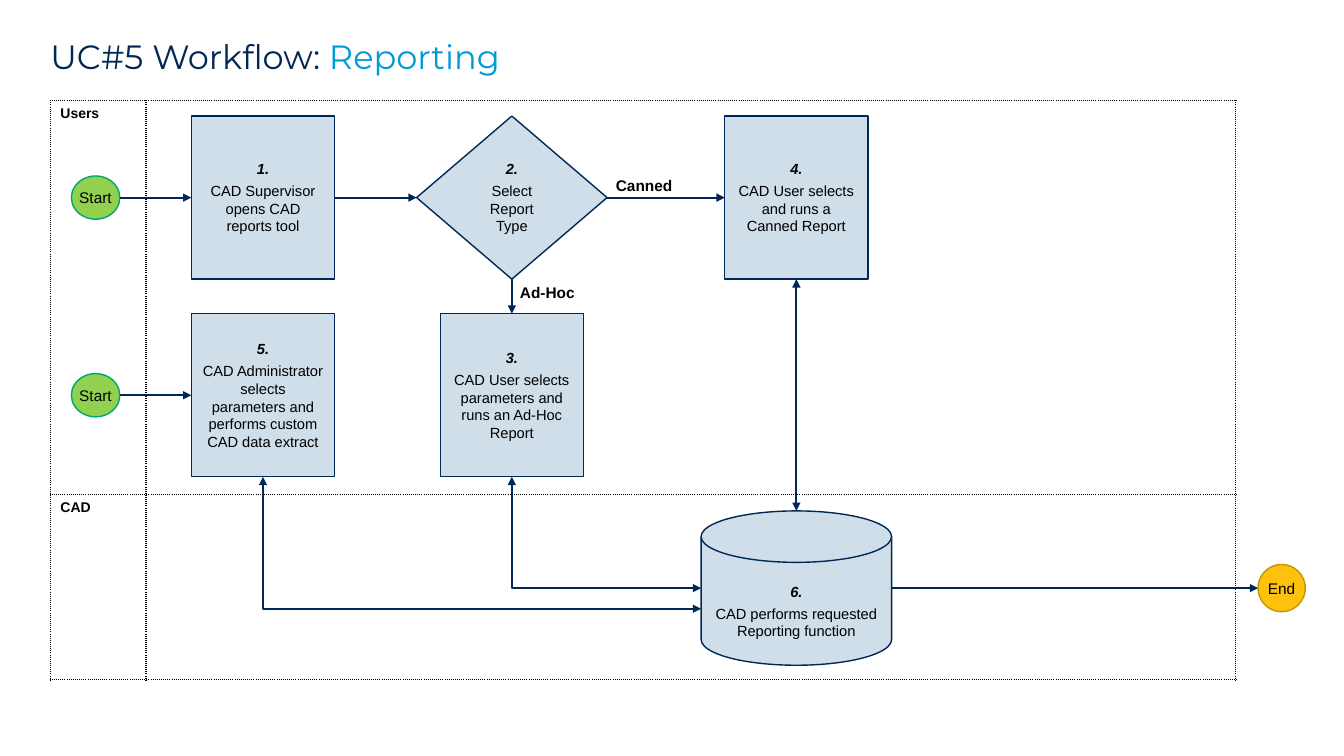
from lxml import etree
from pptx import Presentation
from pptx.dml.color import RGBColor
from pptx.enum.shapes import MSO_CONNECTOR, MSO_SHAPE
from pptx.enum.text import MSO_ANCHOR, PP_ALIGN
from pptx.oxml.ns import qn
from pptx.util import Cm, Pt

RECTANGLE = MSO_SHAPE.RECTANGLE
DIAMOND = MSO_SHAPE.DIAMOND
DISK = MSO_SHAPE.FLOWCHART_MAGNETIC_DISK
OVAL = MSO_SHAPE.OVAL
STRAIGHT, ELBOW = MSO_CONNECTOR.STRAIGHT, MSO_CONNECTOR.ELBOW
CENTER, MIDDLE = PP_ALIGN.CENTER, MSO_ANCHOR.MIDDLE
TOP, LEFT, BOTTOM, RIGHT = range(4)

# Centres of the columns and rows, in cm
START_X, FIRST_X, SECOND_X, THIRD_X, END_X = 2.41, 6.63, 12.9, 20.07, 32.3
USER_Y, ADMIN_Y, CAD_Y = 4.98, 9.96, 14.82
BOX_WIDTH, BOX_HEIGHT, WIDE = 3.61, 4.11, 4.8
DISK_HEIGHT = 3.89
START_WIDTH, START_HEIGHT, END_SIZE = 1.22, 1.09, 1.19


def color(value):
    return RGBColor.from_string(value)


class Workflow:
    navy, sky, pale, black = "002856", "009AD7", "D0DEEA", "000000"
    body_font, title_font = "Arial", "Montserrat"

    def __init__(self, page):
        self.page = page

    def style(self, paragraph, size, bold=False, italic=False):
        font = paragraph.font
        font.name, font.size = self.body_font, Pt(size)
        font.bold, font.italic = bold, italic
        font.color.rgb = color(self.black)

    def text_box(self, left, top, width, height, margin=0.0):
        box = self.page.shapes.add_textbox(Cm(left), Cm(top), Cm(width), Cm(height))
        frame = box.text_frame
        frame.word_wrap = True
        frame.margin_left = frame.margin_right = 0
        frame.margin_top = frame.margin_bottom = Cm(margin)
        return frame

    def title(self, lead, topic):
        para = self.text_box(1.27, 1.02, 31.32, 1.22).paragraphs[0]
        para.line_spacing = 0.9
        for text, shade in ((lead, self.navy), (topic, self.sky)):
            span = para.add_run()
            span.text = text
            span.font.name, span.font.size = self.title_font, Pt(24)
            span.font.color.rgb = color(shade)

    def branch_label(self, text, left, top):
        para = self.text_box(left, top, 1.83, 0.74, 0.13).paragraphs[0]
        para.text = text
        para.alignment = CENTER
        self.style(para, 11, bold=True)

    def swimlanes(self, names, widths, heights):
        table = self.page.shapes.add_table(
            len(heights), len(widths), Cm(1.27), Cm(2.54),
            Cm(sum(widths)), Cm(sum(heights))).table
        table.first_row = table.horz_banding = False
        for column, width in zip(table.columns, widths):
            column.width = Cm(width)
        for row, height, name in zip(table.rows, heights, names):
            row.height = Cm(height)
            row.cells[0].text = name
            self.style(row.cells[0].text_frame.paragraphs[0], 10, bold=True)
        for cell in table.iter_cells():
            self.dotted_borders(cell)
            cell.fill.background()

    def dotted_borders(self, cell):
        properties = cell._tc.get_or_add_tcPr()
        for side in ("lnL", "lnR", "lnT", "lnB"):
            line = etree.SubElement(properties, qn(f"a:{side}"), w=str(Pt(1)))
            fill = etree.SubElement(line, qn("a:solidFill"))
            etree.SubElement(fill, qn("a:srgbClr"), val=self.black)
            etree.SubElement(line, qn("a:prstDash"), val="sysDot")

    def shape(self, kind, x, y, width, height, fill, outline, texts):
        """Draw a shape centred on x, y with one paragraph per text."""
        shape = self.page.shapes.add_shape(
            kind, Cm(x - width / 2), Cm(y - height / 2), Cm(width), Cm(height))
        shape.shadow.inherit = False
        shape.fill.solid()
        shape.fill.fore_color.rgb = color(fill)
        shape.line.color.rgb = color(outline)
        shape.line.width = Pt(1)
        frame = shape.text_frame
        frame.text = "\n".join(texts)
        frame.vertical_anchor = MIDDLE
        for para in frame.paragraphs:
            para.alignment = CENTER
            para.space_after = Pt(3)
        return shape

    def step(self, number, text, x, y, kind=RECTANGLE, width=BOX_WIDTH, height=BOX_HEIGHT):
        shape = self.shape(kind, x, y, width, height, self.pale, self.navy,
                           (f"{number}.", text))
        heading, body = shape.text_frame.paragraphs
        self.style(heading, 10.5, bold=True, italic=True)
        self.style(body, 10.5)
        if kind == DISK:
            frame = shape.text_frame
            frame.margin_left = frame.margin_right = frame.margin_bottom = 0
            frame.margin_top = Cm(0.51)
        return shape

    def terminal(self, text, x, y, width, height, fill, outline):
        shape = self.shape(OVAL, x, y, width, height, fill, outline, (text,))
        shape.text_frame.word_wrap = False
        self.style(shape.text_frame.paragraphs[0], 11)

    def arrow(self, begin, end, both=False, kind=STRAIGHT):
        """Join two ends, each a point in cm or a (shape, side) pair."""
        line = self.page.shapes.add_connector(kind, 0, 0, 0, 0)
        if isinstance(begin[0], float):
            line.begin_x, line.begin_y = map(Cm, begin)
        else:
            line.begin_connect(*begin)
        if isinstance(end[0], float):
            line.end_x, line.end_y = map(Cm, end)
        else:
            line.end_connect(*end)
        line.line.color.rgb = color(self.navy)
        line.line.width = Pt(1.5)
        properties = line.element.spPr
        outline = properties.find(qn("a:ln"))
        for tip in ("headEnd", "tailEnd") if both else ("tailEnd",):
            etree.SubElement(outline, qn(f"a:{tip}"), type="triangle")
        etree.SubElement(properties, qn("a:effectLst"))
        return line

    def corner_arrow(self, begin, end):
        """Run sideways from begin, then turn once up to end."""
        line = self.page.shapes.add_connector(ELBOW, *map(Cm, begin + end))
        line.element.spPr.find(qn("a:prstGeom")).set("prst", "bentConnector2")
        line.line.color.rgb = color(self.navy)
        line.line.width = Pt(1.5)
        outline = line.element.spPr.find(qn("a:ln"))
        for tip in ("headEnd", "tailEnd"):
            etree.SubElement(outline, qn(f"a:{tip}"), type="triangle")
        etree.SubElement(line.element.spPr, qn("a:effectLst"))


def main():
    deck = Presentation()
    deck.slide_width, deck.slide_height = Cm(33.87), Cm(19.05)
    flow = Workflow(deck.slides.add_slide(deck.slide_layouts[6]))

    flow.swimlanes(("Users", "CAD"), (2.41, 27.46), (9.93, 4.65))
    flow.title("UC#5 Workflow: ", "Reporting")

    supervisor = flow.step(1, "CAD Supervisor opens CAD reports tool", FIRST_X, USER_Y)
    choice = flow.step(2, "Select Report Type", SECOND_X, USER_Y, DIAMOND, WIDE)
    ad_hoc = flow.step(3, "CAD User selects parameters and runs an Ad-Hoc Report",
                       SECOND_X, ADMIN_Y)
    canned = flow.step(4, "CAD User selects and runs a Canned Report", THIRD_X, USER_Y)
    extract = flow.step(5, "CAD Administrator selects parameters and performs custom "
                        "CAD data extract", FIRST_X, ADMIN_Y)
    flow.step(6, "CAD performs requested Reporting function",
              THIRD_X, CAD_Y, DISK, WIDE, DISK_HEIGHT)

    for y, first_step in ((USER_Y, supervisor), (ADMIN_Y, extract)):
        flow.terminal("Start", START_X, y, START_WIDTH, START_HEIGHT, "92D050", "00A76D")
        flow.arrow((START_X + START_WIDTH / 2, y), (first_step, LEFT))
    flow.terminal("End", END_X, CAD_Y, END_SIZE, END_SIZE, "FEC10D", "C79501")

    flow.arrow((supervisor, RIGHT), (choice, LEFT))
    flow.arrow((choice, RIGHT), (canned, LEFT))
    flow.arrow((choice, BOTTOM), (ad_hoc, TOP))
    flow.arrow((canned, BOTTOM), (THIRD_X, CAD_Y - DISK_HEIGHT / 2), both=True)
    flow.arrow((THIRD_X + WIDE / 2, CAD_Y), (END_X - END_SIZE / 2, CAD_Y))
    disk_left, box_bottom = THIRD_X - WIDE / 2, ADMIN_Y + BOX_HEIGHT / 2
    for x, y in ((SECOND_X, CAD_Y), (FIRST_X, CAD_Y + 0.52)):
        flow.corner_arrow((disk_left, y), (x, box_bottom))

    flow.branch_label("Canned", 15.32, 4.32)
    flow.branch_label("Ad-Hoc", 12.88, 7.01)
    deck.save("out.pptx")


if __name__ == "__main__":
    main()
